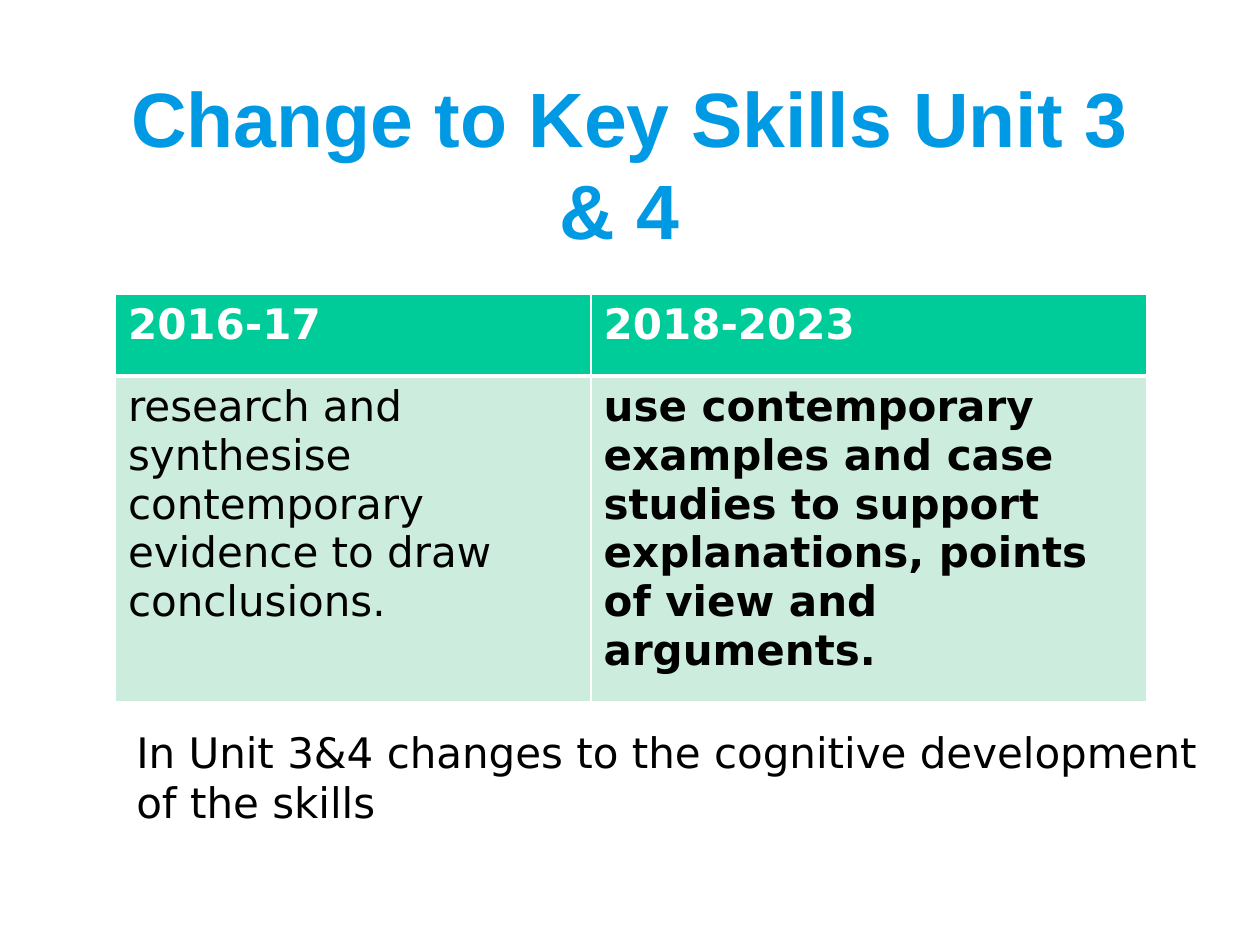
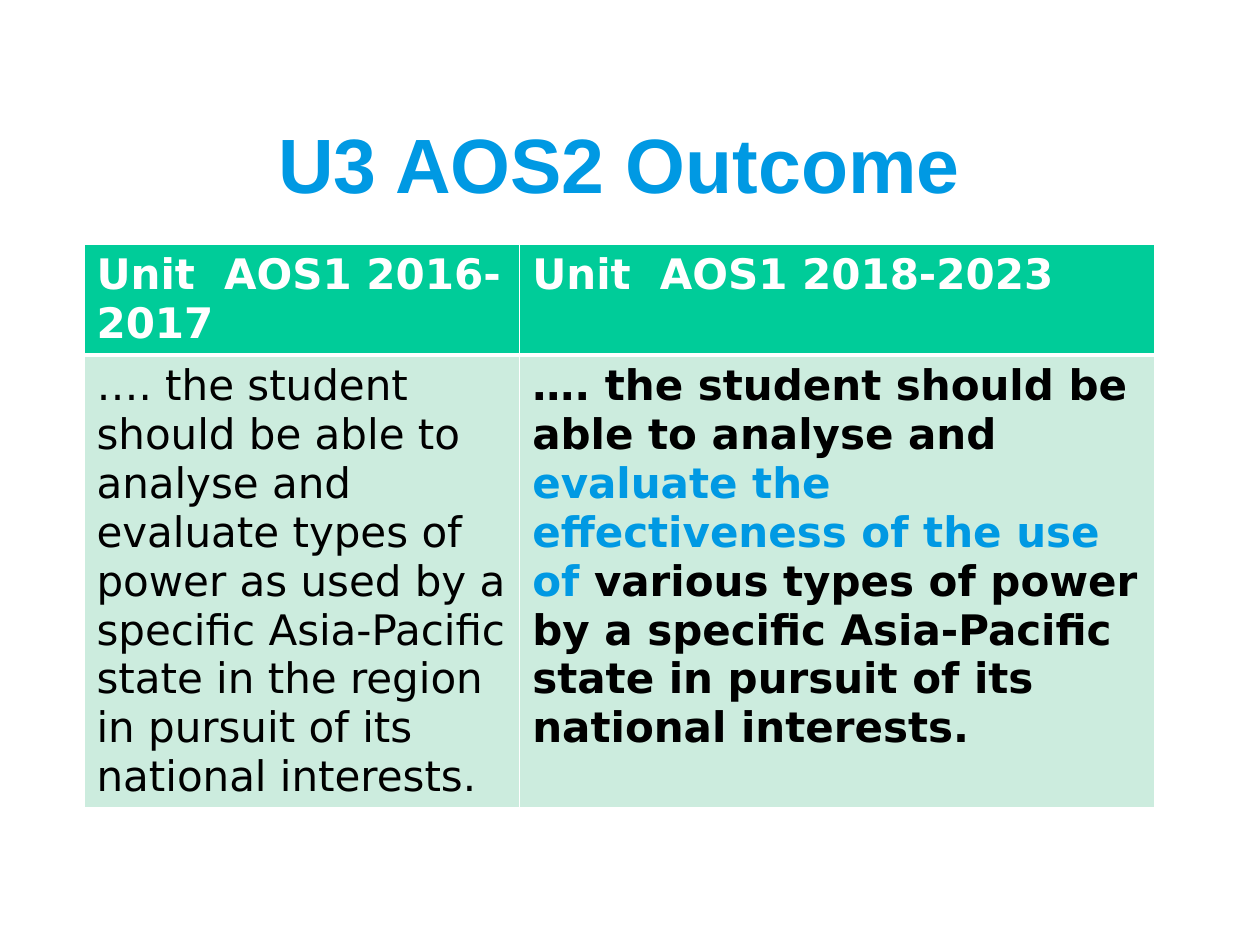
"""Build two slides that compare the study design before and after 2018."""
import dataclasses

import lxml.etree
import pptx
import pptx.dml.color
import pptx.enum.text
import pptx.oxml.ns
import pptx.util


@dataclasses.dataclass(frozen=True)
class Theme:
    accent: str = "0099E3"
    header: str = "00CC99"
    body: str = "CCECDE"
    dark: str = "000000"
    light: str = "FFFFFF"
    title_font: str = "Arial"
    text_font: str = "DejaVu Sans"
    title_size: int = 44
    text_size: int = 24
    thin: int = 1
    thick: int = 3


def rgb(color):
    return pptx.dml.color.RGBColor.from_string(color)


class Deck:
    COLUMNS, ROWS = 120, 90

    def __init__(self, theme):
        self.theme = theme
        self.prs = pptx.Presentation()
        self.prs.slide_width = pptx.util.Inches(10)
        self.prs.slide_height = pptx.util.Inches(7.5)
        self.slide = None

    def x(self, columns):
        return round(self.prs.slide_width * columns / self.COLUMNS)

    def y(self, rows):
        return round(self.prs.slide_height * rows / self.ROWS)

    def style(self, p, color, bold=False, size=None, name=None):
        p.font.name = name or self.theme.text_font
        p.font.size = pptx.util.Pt(size or self.theme.text_size)
        p.font.bold = bold
        p.font.color.rgb = rgb(color)

    def new_slide(self, title):
        t = self.theme
        self.slide = self.prs.slides.add_slide(self.prs.slide_layouts[5])
        sp = self.slide.shapes.title
        sp.left, sp.top, sp.width, sp.height = self.x(9), self.y(8), self.x(102), self.y(15)
        tf = sp.text_frame
        tf.text = title
        tf.word_wrap = True
        tf.auto_size = pptx.enum.text.MSO_AUTO_SIZE.NONE
        tf.vertical_anchor = pptx.enum.text.MSO_ANCHOR.MIDDLE
        p = tf.paragraphs[0]
        p.alignment = pptx.enum.text.PP_ALIGN.CENTER
        self.style(p, t.accent, True, t.title_size, t.title_font)

    def borders(self, cell, top, bottom):
        thin = self.theme.thin
        tc_pr = cell._tc.get_or_add_tcPr()
        for side, width in zip("LRTB", (thin, thin, top, bottom)):
            ln = lxml.etree.SubElement(tc_pr, pptx.oxml.ns.qn(f"a:ln{side}"),
                                       w=str(pptx.util.Pt(width)))
            fill = lxml.etree.SubElement(ln, pptx.oxml.ns.qn("a:solidFill"))
            lxml.etree.SubElement(fill, pptx.oxml.ns.qn("a:srgbClr"), val=self.theme.light)

    def cell(self, cell, runs, is_header, bold):
        t = self.theme
        edges = (t.thin, t.thick) if is_header else (t.thick, t.thin)
        self.borders(cell, *edges)
        cell.fill.solid()
        cell.fill.fore_color.rgb = rgb(t.header if is_header else t.body)
        p = cell.text_frame.paragraphs[0]
        self.style(p, t.light if is_header else t.dark, bold)
        for text, color in runs:
            r = p.add_run()
            r.text = text
            if color:
                r.font.color.rgb = rgb(color)

    def comparison(self, left, top, widths, heights, headers, before, after):
        table = self.slide.shapes.add_table(
            2, 2, self.x(left), self.y(top),
            self.x(sum(widths)), self.y(sum(heights))).table
        for column, width in zip(table.columns, widths):
            column.width = self.x(width)
        for row, height in zip(table.rows, heights):
            row.height = self.y(height)
        for i, header in enumerate(headers):
            self.cell(table.cell(0, i), [(header, None)], True, True)
        for i, runs in enumerate((before, after)):
            self.cell(table.cell(1, i), runs, False, i == 1)

    def note(self, left, top, width, height, text):
        sp = self.slide.shapes.add_textbox(self.x(left), self.y(top),
                                           self.x(width), self.y(height))
        tf = sp.text_frame
        tf.word_wrap = True
        tf.auto_size = pptx.enum.text.MSO_AUTO_SIZE.SHAPE_TO_FIT_TEXT
        tf.text = text
        self.style(tf.paragraphs[0], self.theme.dark)


def main():
    theme = Theme()
    deck = Deck(theme)

    deck.new_slide("Change to Key Skills Unit 3 & 4 ")
    deck.comparison(
        11, 28, (45.3, 52.9), (7.8, 31), ("2016-17", "2018-2023"),
        [("research and synthesise contemporary evidence to draw conclusions.", None)],
        [("use contemporary examples and case studies to support explanations, "
          "points of view and arguments.", None)])
    deck.note(11.8, 68.6, 103.9, 10.9,
              "In Unit 3&4 changes to the cognitive development of the skills")

    deck.new_slide("U3 AOS2 Outcome ")
    deck.comparison(
        8, 23.3, (41.5, 60.5), (5, 5),
        ("Unit  AOS1 2016-2017", "Unit  AOS1 2018-2023"),
        [("…. the student should be able to analyse and evaluate types of power as used "
          "by a specific Asia-Pacific state in the region in pursuit of its national "
          "interests.", None)],
        [("…. the student should be able to analyse and ", None),
         ("evaluate the effectiveness of the use of", theme.accent),
         (" various types of power by a specific Asia-Pacific state in pursuit of its "
          "national interests.", None)])

    deck.prs.save("out.pptx")


if __name__ == "__main__":
    main()
